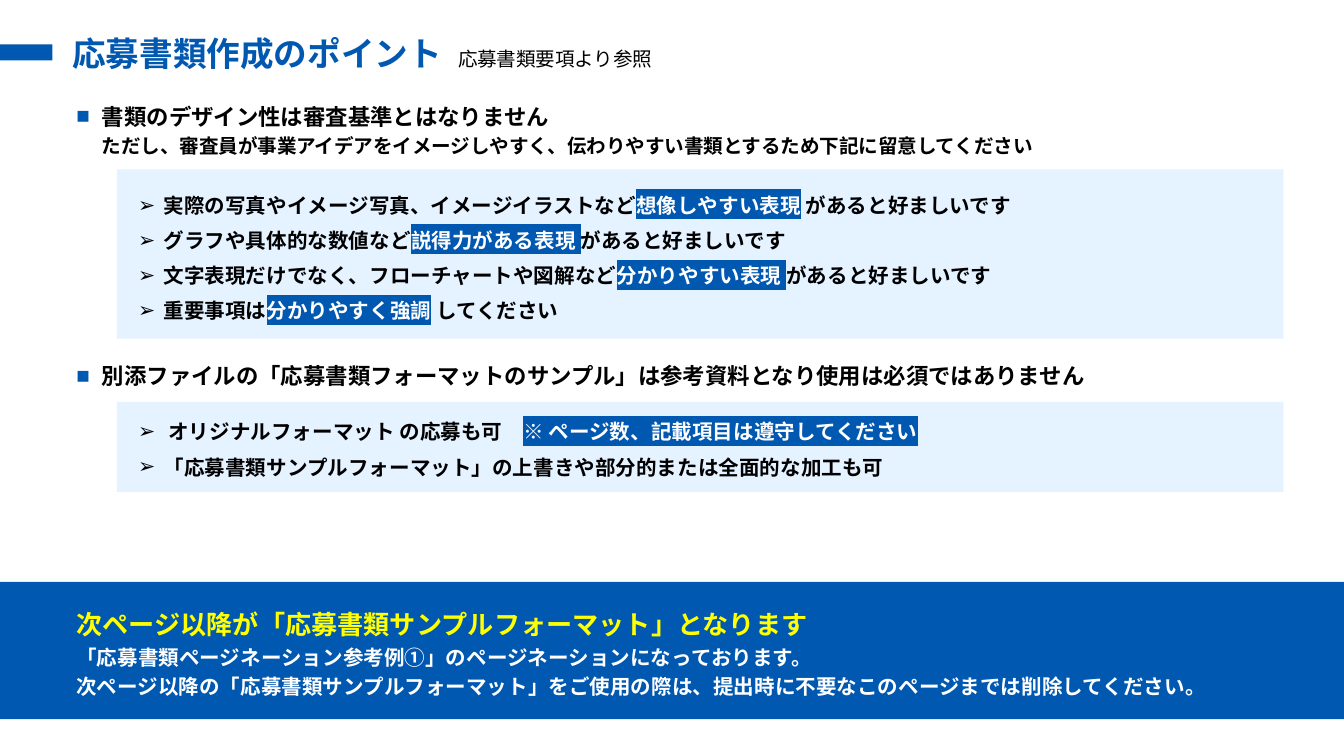
from dataclasses import dataclass

from lxml.etree import SubElement
from pptx import Presentation
from pptx.dml.color import RGBColor
from pptx.enum.shapes import MSO_SHAPE
from pptx.enum.text import MSO_ANCHOR, MSO_AUTO_SIZE
from pptx.oxml.ns import qn
from pptx.util import Inches, Pt


@dataclass(frozen=True)
class Theme:
    blue: str = "0058B0"
    pale: str = "E5F2FF"
    black: str = "000000"
    white: str = "FFFFFF"
    yellow: str = "FFFF00"
    font: str = "Arial"
    accent_font: str = "Lato"
    title: float = 18
    lead: float = 14
    heading: float = 12
    body: float = 11
    note: float = 10.5


THEME = Theme()

TITLE = "応募書類作成のポイント"
REFERENCE = "応募書類要項より参照"
SECTIONS = [
    {
        "heading": "書類のデザイン性は審査基準とはなりません",
        "detail": "ただし、審査員が事業アイデアをイメージしやすく、伝わりやすい書類とするため下記に留意してください",
        "heading_box": (0.47, 0.68, 8.88, 0.54),
        "panel_box": (0.87, 1.26, 8.68, 1.26),
        "points_box": (0.93, 1.35, 8.27, 1.1),
        "points": [
            ("実際の写真やイメージ写真、イメージイラストなど", "想像しやすい表現", " があると好ましいです"),
            ("グラフや具体的な数値など", "説得力がある表現 ", "があると好ましいです"),
            ("文字表現だけでなく、フローチャートや図解など", "分かりやすい表現 ", "があると好ましいです"),
            ("重要事項は", "分かりやすく強調", " してください"),
        ],
    },
    {
        "heading": "別添ファイルの「応募書類フォーマットのサンプル」は参考資料となり使用は必須ではありません",
        "detail": "",
        "heading_box": (0.47, 2.61, 7.8, 0.33),
        "panel_box": (0.87, 2.99, 8.68, 0.67),
        "points_box": (0.93, 3.04, 8.27, 0.57),
        "points": [
            (" オリジナルフォーマット の応募も可　", "※ ページ数、記載項目は遵守してください"),
            ("「応募書類サンプルフォーマット」の上書きや部分的または全面的な加工も可",),
        ],
    },
]
CLOSING_LEAD = "次ページ以降が「応募書類サンプルフォーマット」となります"
CLOSING_LINES = [
    "「応募書類ページネーション参考例①」のページネーションになっております。",
    "次ページ以降の「応募書類サンプルフォーマット」をご使用の際は、提出時に不要なこのページまでは削除してください。",
]


def add_block(slide, box, color, outline=MSO_SHAPE.RECTANGLE):
    block = slide.shapes.add_shape(outline, *map(Inches, box))
    block.shadow.inherit = False
    block.fill.solid()
    block.fill.fore_color.rgb = RGBColor.from_string(color)
    block.line.fill.background()
    return block


def add_frame(slide, box, wrap=True, anchor=MSO_ANCHOR.TOP):
    frame = slide.shapes.add_textbox(*map(Inches, box)).text_frame
    frame.word_wrap = wrap
    frame.auto_size = MSO_AUTO_SIZE.SHAPE_TO_FIT_TEXT
    frame.vertical_anchor = anchor
    return frame


def style(paragraph, size, color=THEME.black, name=THEME.font, bold=True, spacing=1.2, before=0):
    font = paragraph.font
    font.size, font.name, font.bold = Pt(size), name, bold
    font.color.rgb = RGBColor.from_string(color)
    paragraph.line_spacing = spacing
    paragraph.space_before = Pt(before)


def add_bullet(paragraph, symbol, color):
    properties = paragraph.font._element.getparent()
    properties.set("marL", str(Inches(0.19)))
    properties.set("indent", str(Inches(-0.19)))
    bullet_color = SubElement(properties, qn("a:buClr"))
    SubElement(bullet_color, qn("a:srgbClr"), val=color)
    bullet_font = SubElement(properties, qn("a:buFont"), typeface=THEME.font)
    character = SubElement(properties, qn("a:buChar"), char=symbol)
    for part in (bullet_color, bullet_font, character):
        paragraph.font._element.addprevious(part)


def highlight(run):
    run.font.color.rgb = RGBColor.from_string(THEME.white)
    marker = SubElement(run.font._element, qn("a:highlight"))
    SubElement(marker, qn("a:srgbClr"), val=THEME.blue)
    run.font._element.find(qn("a:solidFill")).addnext(marker)


def add_section(slide, section):
    add_block(slide, section["panel_box"], THEME.pale)
    heading = add_frame(slide, section["heading_box"], anchor=MSO_ANCHOR.MIDDLE).paragraphs[0]
    style(heading, THEME.heading, before=6)
    add_bullet(heading, "■", THEME.blue)
    heading.add_run().text = section["heading"]
    if section["detail"]:
        heading.add_line_break()
        detail = heading.add_run()
        detail.text = section["detail"]
        detail.font.size = Pt(THEME.note)

    points = add_frame(slide, section["points_box"], anchor=MSO_ANCHOR.MIDDLE)
    for index, phrases in enumerate(section["points"]):
        point = points.add_paragraph() if index else points.paragraphs[0]
        style(point, THEME.body, before=3)
        add_bullet(point, "➢", THEME.black)
        for position, phrase in enumerate(phrases):
            run = point.add_run()
            run.text = phrase
            if position == 1:
                highlight(run)


def main():
    presentation = Presentation()
    presentation.slide_width = Inches(10)
    presentation.slide_height = presentation.slide_width * 9 // 16
    slide = presentation.slides.add_slide(presentation.slide_layouts[6])

    add_block(slide, (0, 0.33, 0.39, 0.12), THEME.blue)
    banner = add_block(slide, (0, 4.33, 10, 1.02), THEME.blue, MSO_SHAPE.ROUNDED_RECTANGLE)
    banner.adjustments[0] = 0

    title = add_frame(slide, (0.44, 0.22, 2.98, 0.38), False, MSO_ANCHOR.MIDDLE).paragraphs[0]
    title.text = TITLE
    style(title, THEME.title, THEME.blue, spacing=0.9)

    for section in SECTIONS:
        add_section(slide, section)

    closing = add_frame(slide, (0.47, 4.43, 9.33, 0.82))
    lead, instructions = closing.paragraphs[0], closing.add_paragraph()
    lead.text = CLOSING_LEAD
    style(lead, THEME.lead, THEME.yellow, THEME.accent_font)
    instructions.text = "\v".join(CLOSING_LINES)
    style(instructions, THEME.body, THEME.white, THEME.accent_font)

    reference = add_frame(slide, (3.31, 0.3, 1.67, 0.28), False).paragraphs[0]
    reference.text = REFERENCE
    style(reference, THEME.note, name=THEME.accent_font, bold=False, spacing=1.0)

    presentation.save("out.pptx")


if __name__ == "__main__":
    main()
